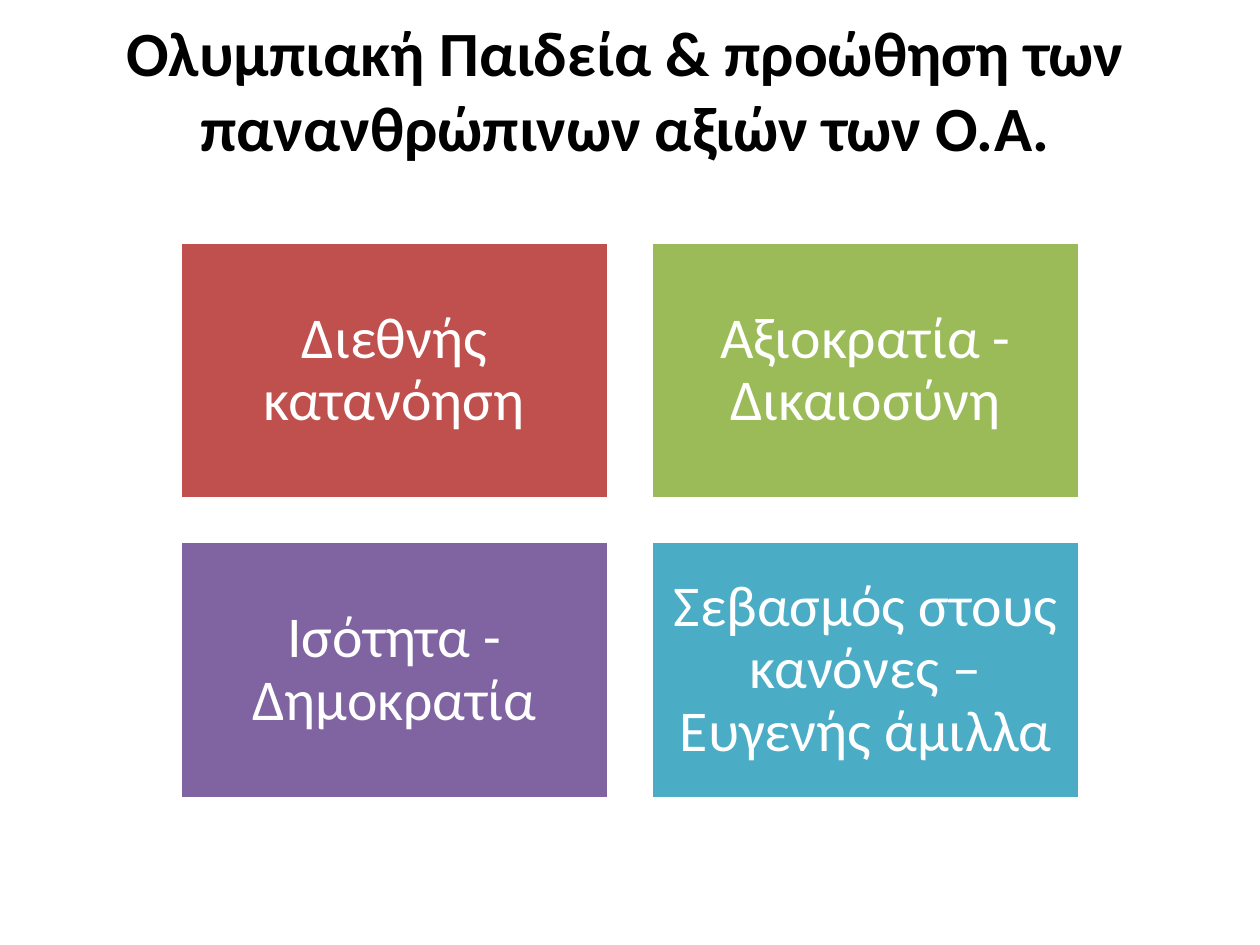
from pptx import Presentation
from pptx import util as u
from pptx.dml.color import RGBColor
from pptx.enum import shapes, text

FONT = "Calibri"
COLOURS = {
    "black": "000000",
    "white": "FFFFFF",
    "red": "C0504D",
    "green": "9BBB59",
    "purple": "8064A2",
    "blue": "4BACC6",
}
HEADING = "Ολυμπιακή Παιδεία & προώθηση των πανανθρώπινων αξιών των Ο.Α."
VALUES = [
    ("Διεθνής κατανόηση", "red"),
    ("Αξιοκρατία - Δικαιοσύνη", "green"),
    ("Ισότητα - Δημοκρατία", "purple"),
    ("Σεβασμός στους κανόνες – Ευγενής άμιλλα", "blue"),
]
COLUMNS = 2
LEFT, TOP = 3.63, 4.88
WIDTH, HEIGHT, GAP = 8.64, 5.18, 0.86
INSET = u.Cm(0.36)


def colour(name):
    return RGBColor.from_string(COLOURS[name])


def write(frame, words, size, ink, bold=False):
    frame.word_wrap = True
    frame.vertical_anchor = text.MSO_ANCHOR.MIDDLE
    paragraph = frame.paragraphs[0]
    paragraph.alignment = text.PP_ALIGN.CENTER
    run = paragraph.add_run()
    run.text = words
    run.font.name = FONT
    run.font.size = u.Pt(size)
    run.font.bold = bold
    run.font.color.rgb = colour(ink)
    return paragraph


def add_value(slide, index, words, fill):
    row, column = divmod(index, COLUMNS)
    value = slide.shapes.add_shape(
        shapes.MSO_SHAPE.RECTANGLE,
        u.Cm(LEFT + column * (WIDTH + GAP)),
        u.Cm(TOP + row * (HEIGHT + GAP)),
        u.Cm(WIDTH),
        u.Cm(HEIGHT),
    )
    value.shadow.inherit = False
    value.fill.solid()
    value.fill.fore_color.rgb = colour(fill)
    value.line.color.rgb = colour("white")
    value.line.width = u.Pt(2)
    frame = value.text_frame
    frame.margin_left = frame.margin_right = INSET
    frame.margin_top = frame.margin_bottom = INSET
    write(frame, words, 33, "white").line_spacing = 0.9


def main():
    deck = Presentation()
    deck.slide_width, deck.slide_height = u.Cm(25.4), u.Cm(19.05)
    slide = deck.slides.add_slide(deck.slide_layouts[6])
    heading = slide.shapes.add_textbox(u.Cm(0.64), u.Cm(0.2), u.Cm(23.93), u.Cm(3.18))
    write(heading.text_frame, HEADING, 36, "black", bold=True)
    for index, (words, fill) in enumerate(VALUES):
        add_value(slide, index, words, fill)
    deck.save("out.pptx")


if __name__ == "__main__":
    main()
